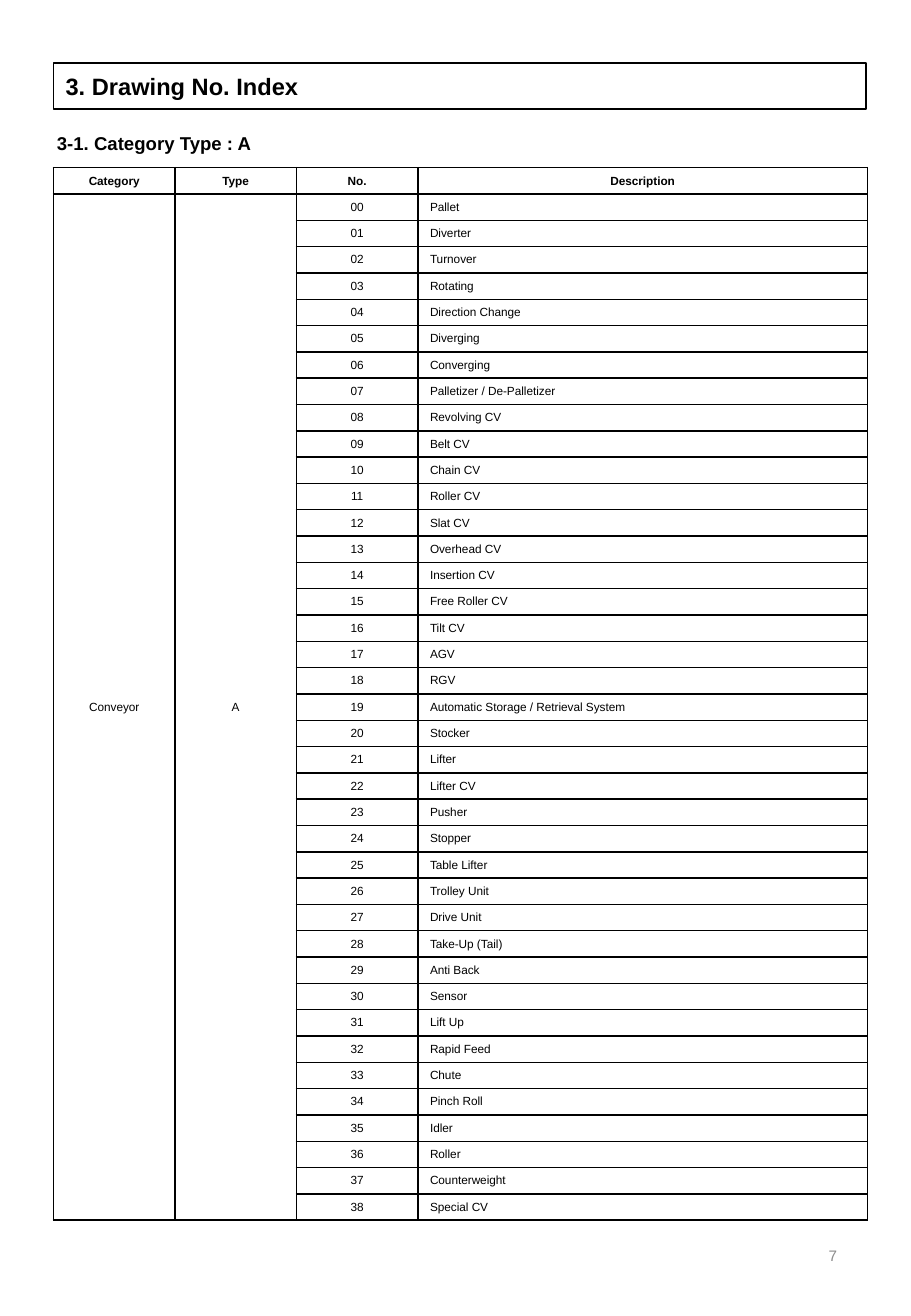
from lxml.etree import SubElement
from pptx import Presentation
from pptx.dml.color import RGBColor
from pptx.enum.text import MSO_ANCHOR as Anchor, MSO_AUTO_SIZE as AutoSize, PP_ALIGN as Align
from pptx.oxml.ns import qn
from pptx.util import Inches, Pt

COLORS = {"ink": "000000", "paper": "FFFFFF", "page_number": "8C8C8C"}
FONT = "Arial"
TABLE_SIZE = 7
HEADERS = ["Category", "Type", "No.", "Description"]
COLUMN_WIDTHS = [1, 1, 1, 3.7]
DESCRIPTIONS = [
    "Pallet", "Diverter", "Turnover", "Rotating", "Direction Change", "Diverging",
    "Converging", "Palletizer / De-Palletizer", "Revolving CV", "Belt CV", "Chain CV",
    "Roller CV", "Slat CV", "Overhead CV", "Insertion CV", "Free Roller CV", "Tilt CV",
    "AGV", "RGV", "Automatic Storage / Retrieval System", "Stocker", "Lifter",
    "Lifter CV", "Pusher", "Stopper", "Table Lifter", "Trolley Unit", "Drive Unit",
    "Take-Up (Tail)", "Anti Back", "Sensor", "Lift Up", "Rapid Feed", "Chute",
    "Pinch Roll", "Idler", "Roller", "Counterweight", "Special CV",
]


class IndexPage:
    """Holds the page and its style, and adds each kind of element."""

    def __init__(self, deck):
        """Add a page with a title placeholder."""
        self.page = deck.slides.add_slide(deck.slide_layouts[5])

    def color(self, name):
        """Look up a named colour."""
        return RGBColor.from_string(COLORS[name])

    def fill_text(self, frame, text, size, bold=False, align=Align.LEFT, color="ink"):
        """Fill a text frame with one styled paragraph."""
        frame.text = text
        para = frame.paragraphs[0]
        para.alignment = align
        for span in para.runs:
            span.font.name = FONT
            span.font.size = Pt(size)
            span.font.bold = bold
            span.font.color.rgb = self.color(color)

    def title(self, text, left, top, width, height):
        """Place the framed page title."""
        box = self.page.shapes.title
        box.left, box.top = Inches(left), Inches(top)
        box.width, box.height = Inches(width), Inches(height)
        box.line.color.rgb = self.color("ink")
        box.line.width = Pt(1)
        frame = box.text_frame
        frame.auto_size = AutoSize.NONE
        frame.vertical_anchor = Anchor.MIDDLE
        self.fill_text(frame, text, 14, bold=True)

    def text(self, text, left, top, width, height, size, anchor=Anchor.TOP, **style):
        """Add a text box."""
        box = self.page.shapes.add_textbox(
            Inches(left), Inches(top), Inches(width), Inches(height))
        frame = box.text_frame
        frame.word_wrap = True
        frame.vertical_anchor = anchor
        self.fill_text(frame, text, size, **style)

    def cell(self, cell, text, bold, align):
        """Fill a table cell and give it thin borders on every side."""
        for side in ("a:lnL", "a:lnR", "a:lnT", "a:lnB"):
            line = SubElement(cell._tc.get_or_add_tcPr(), qn(side), w=str(Pt(1)))
            fill = SubElement(line, qn("a:solidFill"))
            SubElement(fill, qn("a:srgbClr"), val=COLORS["ink"])
        cell.fill.solid()
        cell.fill.fore_color.rgb = self.color("paper")
        cell.vertical_anchor = Anchor.MIDDLE
        cell.margin_top = cell.margin_bottom = Inches(0.02)
        self.fill_text(cell.text_frame, text, TABLE_SIZE, bold, align)
        SubElement(cell.text_frame.paragraphs[0]._p, qn("a:endParaRPr"),
                   sz=str(TABLE_SIZE * 100))

    def table(self, rows, widths, left, top, height):
        """Add a table whose first two columns merge below the header."""
        table = self.page.shapes.add_table(
            len(rows), len(widths), Inches(left), Inches(top),
            Inches(sum(widths)), Inches(height)).table
        table.horz_banding = False
        for column, width in zip(table.columns, widths):
            column.width = Inches(width)
        for r, row in enumerate(rows):
            table.rows[r].height = Inches(height / len(rows))
            for c, text in enumerate(row):
                is_description = r > 0 and c == len(widths) - 1
                align = Align.LEFT if is_description else Align.CENTER
                self.cell(table.cell(r, c), text, r == 0, align)
        for c in range(2):
            table.cell(1, c).merge(table.cell(len(rows) - 1, c))


def main():
    """Build the drawing number index."""
    deck = Presentation()
    deck.slide_width, deck.slide_height = Inches(7.5), Inches(10.83)
    index = IndexPage(deck)
    index.title("3. Drawing No. Index", 0.44, 0.52, 6.69, 0.38)
    index.text("3-1. Category Type : A", 0.37, 1.04, 4.59, 0.29, 11, bold=True)
    rows = [HEADERS]
    for number, description in enumerate(DESCRIPTIONS):
        group = ["Conveyor", "A"] if number == 0 else ["", ""]
        rows.append([*group, f"{number:02d}", description])
    index.table(rows, COLUMN_WIDTHS, 0.44, 1.38, 8.67)
    index.text("7", 5.3, 10.04, 1.69, 0.58, 9, Anchor.MIDDLE,
               align=Align.RIGHT, color="page_number")
    deck.save("out.pptx")


if __name__ == "__main__":
    main()
